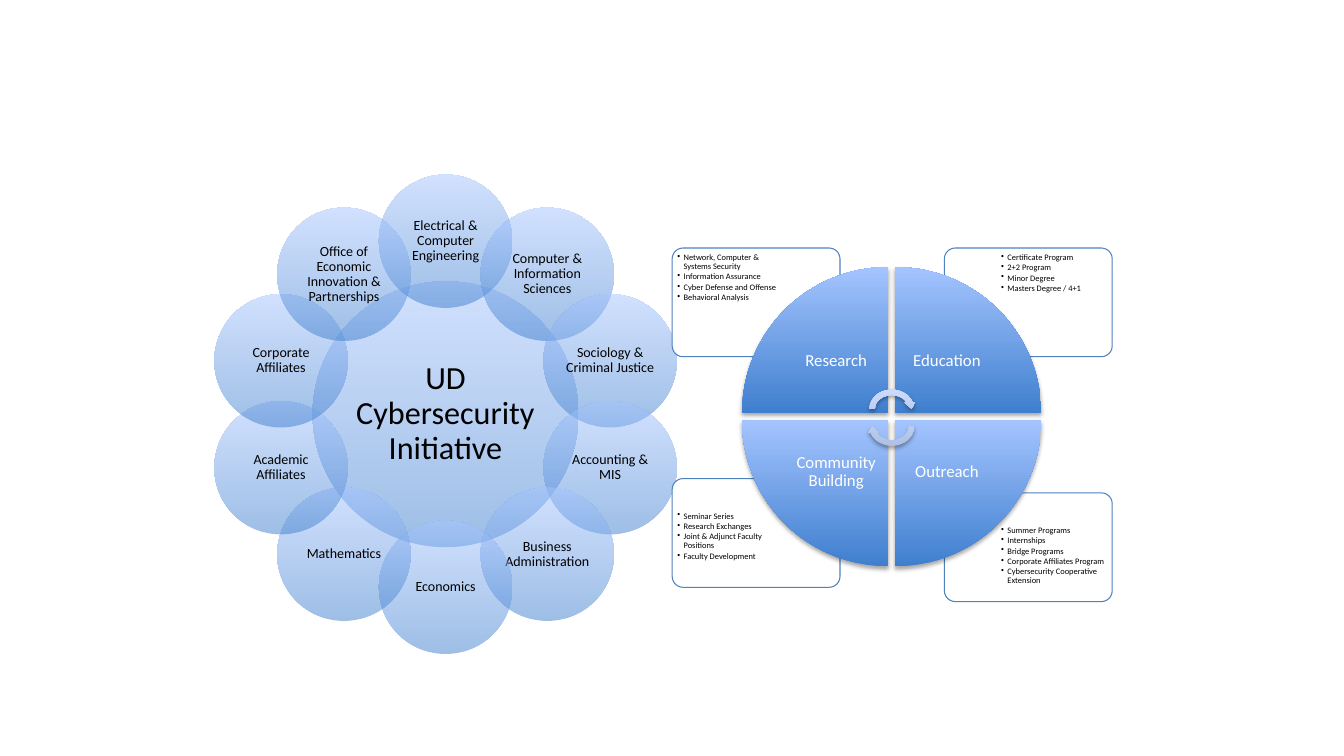
from math import cos, radians, sin

from lxml import etree
from pptx import Presentation
from pptx.dml.color import RGBColor
from pptx.enum.shapes import MSO_SHAPE
from pptx.enum.text import MSO_ANCHOR, PP_ALIGN
from pptx.oxml.ns import qn
from pptx.util import Cm, Pt

OVAL = MSO_SHAPE.OVAL
CARD = MSO_SHAPE.ROUNDED_RECTANGLE
WEDGE = MSO_SHAPE.PIE_WEDGE
ARROW = MSO_SHAPE.CIRCULAR_ARROW
CENTER, LEFT = PP_ALIGN.CENTER, PP_ALIGN.LEFT
MIDDLE, TOP = MSO_ANCHOR.MIDDLE, MSO_ANCHOR.TOP

FONT = "Calibri"
BLUES = ("3F7FCE", "A4C4FF")
PALE_BLUES = ("ADBFE1", "CCDDFF")

# Ring of partners, clockwise from the top (lengths in cm)
RING_X, RING_Y, RING_RADIUS = 11.23, 10.44, 4.36
PARTNERS = [
    "Electrical & Computer Engineering",
    "Computer & Information Sciences",
    "Sociology & Criminal Justice",
    "Accounting & MIS",
    "Business Administration",
    "Economics",
    "Mathematics",
    "Academic Affiliates",
    "Corporate Affiliates",
    "Office of Economic Innovation & Partnerships",
]

# Four-part wheel
WHEEL_X, WHEEL_Y = 22.47, 10.5
WEDGE_SIZE, HALF_GAP, LABEL_SIZE = 3.68, 0.09, 2.61
CARD_WIDTH, CARD_HEIGHT = 4.23, 2.74
LIST_WIDTH, LIST_HEIGHT, LIST_INSET = 2.83, 1.93, 0.05

# Wedge label, rotation, card left and top, card items
QUADRANTS = [
    ("Research", 0, 16.94, 6.25,
     ["Network, Computer & Systems Security", "Information Assurance",
      "Cyber Defense and Offense", "Behavioral Analysis"]),
    ("Education", 90, 23.8, 6.25,
     ["Certificate Program", "2+2 Program", "Minor Degree",
      "Masters Degree / 4+1"]),
    ("Outreach", 180, 23.8, 12.42,
     ["Summer Programs", "Internships", "Bridge Programs",
      "Corporate Affiliates Program", "Cybersecurity Cooperative Extension"]),
    ("Community Building", 270, 16.94, 12.06,
     ["Seminar Series", "Research Exchanges",
      "Joint & Adjunct Faculty Positions", "Faculty Development"]),
]


def color(hex_string):
    return RGBColor.from_string(hex_string)


def set_alpha(color_element, percent):
    etree.SubElement(color_element, qn("a:alpha"), val=str(percent * 1000))


def add_form(group, kind, left, top, width, height, rotation=0):
    form = group.shapes.add_shape(kind, Cm(left), Cm(top), Cm(width), Cm(height))
    form.rotation = rotation
    form.shadow.inherit = False
    form.line.fill.background()
    return form


def fill_gradient(form, colors, alpha=100):
    form.fill.gradient()
    form.fill.gradient_angle = 90
    for stop, hex_string in zip(form.fill.gradient_stops, colors):
        stop.color.rgb = color(hex_string)
    gradient = form.element.spPr.find(qn("a:gradFill"))
    gradient.set("rotWithShape", "0")
    if alpha < 100:
        for tone in gradient.iter(qn("a:srgbClr")):
            set_alpha(tone, alpha)


def drop_shadow(form):
    effects = form.element.spPr.find(qn("a:effectLst"))
    shadow = etree.SubElement(
        effects, qn("a:outerShdw"), blurRad=str(Pt(3.1)), dist=str(Pt(1.8)),
        dir="5400000", rotWithShape="0")
    set_alpha(etree.SubElement(shadow, qn("a:srgbClr"), val="000000"), 35)


def add_bullet(para):
    para.level = 1
    para.space_after = Pt(0.9)
    properties = para._p.get_or_add_pPr()
    properties.set("marL", str(Cm(0.16)))
    properties.set("indent", str(-Cm(0.16)))
    etree.SubElement(properties, qn("a:buChar"), char="•")


def add_text(group, left, top, width, height, lines, size, hex_string="000000",
             inset=0.03, bullets=False):
    box = group.shapes.add_textbox(Cm(left), Cm(top), Cm(width), Cm(height))
    frame = box.text_frame
    frame.word_wrap = True
    frame.vertical_anchor = TOP if bullets else MIDDLE
    frame.margin_left = frame.margin_right = Cm(inset)
    frame.margin_top = frame.margin_bottom = Cm(inset)
    frame.text = "\n".join(lines)
    for para in frame.paragraphs:
        para.alignment = LEFT if bullets else CENTER
        para.line_spacing = 0.9
        if bullets:
            add_bullet(para)
        para.font.name = FONT
        para.font.size = Pt(size)
        para.font.color.rgb = color(hex_string)


def add_circle(group, x, y, diameter, label, size, inset):
    left, top = x - diameter / 2, y - diameter / 2
    circle = add_form(group, OVAL, left, top, diameter, diameter)
    fill_gradient(circle, BLUES, alpha=50)
    side = diameter * sin(radians(45))
    add_text(group, x - side / 2, y - side / 2, side, side, [label], size,
             inset=inset)


def add_card(group, left, top, items, on_right, on_bottom):
    card = add_form(group, CARD, left, top, CARD_WIDTH, CARD_HEIGHT)
    card.adjustments[0] = 0.1
    card.fill.solid()
    card.fill.fore_color.rgb = color("FFFFFF")
    set_alpha(card.element.spPr.find(qn("a:solidFill"))[0], 90)
    card.line.color.rgb = color("4F81BD")
    card.line.width = Pt(0.75)
    # The list sits in the card's outer corner
    across = CARD_WIDTH - LIST_WIDTH - LIST_INSET if on_right else LIST_INSET
    down = CARD_HEIGHT - LIST_HEIGHT - LIST_INSET if on_bottom else LIST_INSET
    add_text(group, left + across, top + down, LIST_WIDTH, LIST_HEIGHT, items, 6,
             inset=0.08, bullets=True)


def wheel_corner(size, on_right, on_bottom):
    near, far = HALF_GAP, -HALF_GAP - size
    return (WHEEL_X + (near if on_right else far),
            WHEEL_Y + (near if on_bottom else far))


def add_wedge(group, label, rotation, on_right, on_bottom):
    left, top = wheel_corner(WEDGE_SIZE, on_right, on_bottom)
    wedge = add_form(group, WEDGE, left, top, WEDGE_SIZE, WEDGE_SIZE, rotation)
    fill_gradient(wedge, BLUES)
    drop_shadow(wedge)
    left, top = wheel_corner(LABEL_SIZE, on_right, on_bottom)
    add_text(group, left, top, LABEL_SIZE, LABEL_SIZE, [label], 12, "FFFFFF",
             inset=0.23)


def add_arrow(group, top, rotation):
    arrow = add_form(group, ARROW, WHEEL_X - 0.63, top, 1.27, 1.11, rotation)
    fill_gradient(arrow, PALE_BLUES)
    drop_shadow(arrow)


def add_ring(page):
    ring = page.shapes.add_group_shape()
    add_circle(ring, RING_X, RING_Y, 6.7, "UD Cybersecurity Initiative", 23, 0.08)
    for index, partner in enumerate(PARTNERS):
        angle = radians(index * 360 / len(PARTNERS))
        add_circle(ring, RING_X + RING_RADIUS * sin(angle),
                   RING_Y - RING_RADIUS * cos(angle), 3.36, partner, 10, 0.03)


def add_wheel(page):
    wheel = page.shapes.add_group_shape()
    # Cards lie behind the wedges
    for label, rotation, left, top, items in QUADRANTS:
        add_card(wheel, left, top, items, rotation in (90, 180), rotation >= 180)
    for label, rotation, *card in QUADRANTS:
        add_wedge(wheel, label, rotation, rotation in (90, 180), rotation >= 180)
    add_arrow(wheel, 9.75, 0)
    add_arrow(wheel, 10.19, 180)


def main():
    deck = Presentation()
    deck.slide_width, deck.slide_height = Cm(33.87), Cm(19.05)
    page = deck.slides.add_slide(deck.slide_layouts[6])
    add_ring(page)
    add_wheel(page)
    deck.save("out.pptx")


if __name__ == "__main__":
    main()
